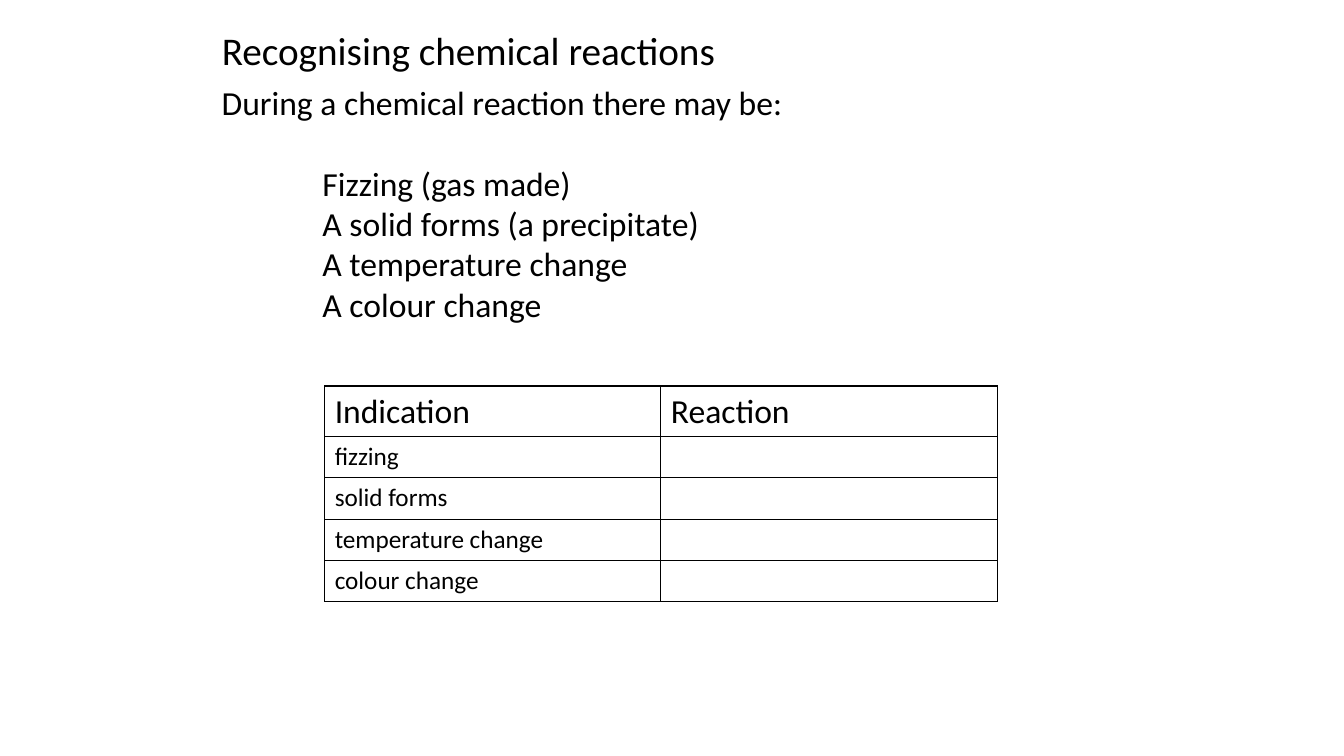
from dataclasses import dataclass

from lxml.etree import SubElement
from pptx import Presentation
from pptx.dml.color import RGBColor
from pptx.enum.text import MSO_ANCHOR, MSO_AUTO_SIZE, PP_ALIGN
from pptx.oxml.ns import qn
from pptx.util import Inches, Pt


@dataclass(frozen=True)
class Theme:
    font: str = "Calibri"
    ink: RGBColor = RGBColor(0, 0, 0)
    title: int = 28
    body: int = 24
    cell: int = 18
    line_height: int = 29
    border: int = 1


class Page:
    """Holds the theme and the current slide, and adds each kind of element."""

    def __init__(self, deck, theme):
        self.theme = theme
        self.slide = deck.slides.add_slide(deck.slide_layouts[5])

    def add_span(self, para, text, size):
        span = para.add_run()
        span.text = text
        span.font.name = self.theme.font
        span.font.size = Pt(size)
        span.font.color.rgb = self.theme.ink

    def place(self, box, left, top, width, height):
        box.left, box.top = Inches(left), Inches(top)
        box.width, box.height = Inches(width), Inches(height)

    def add_title(self, text, *frame):
        box = self.slide.shapes.title
        self.place(box, *frame)
        box.text_frame.word_wrap = True
        box.text_frame.auto_size = MSO_AUTO_SIZE.SHAPE_TO_FIT_TEXT
        box.text_frame.vertical_anchor = MSO_ANCHOR.TOP
        para = box.text_frame.paragraphs[0]
        para.alignment = PP_ALIGN.LEFT
        self.add_span(para, text, self.theme.title)

    def add_list(self, lead, items, indent, *frame):
        box = self.slide.shapes.add_textbox(*map(Inches, frame))
        box.text_frame.word_wrap = True
        box.text_frame.auto_size = MSO_AUTO_SIZE.SHAPE_TO_FIT_TEXT
        lead_para = box.text_frame.paragraphs[0]
        lead_para.space_after = Pt(self.theme.line_height)
        self.add_span(lead_para, lead, self.theme.body)
        for item in items:
            para = box.text_frame.add_paragraph()
            para._p.get_or_add_pPr().set("marL", str(Inches(indent)))
            self.add_span(para, item, self.theme.body)

    def add_borders(self, cell):
        properties = cell._tc.get_or_add_tcPr()
        for side in ("a:lnL", "a:lnR", "a:lnT", "a:lnB"):
            line = SubElement(properties, qn(side), w=str(Pt(self.theme.border)))
            fill = SubElement(line, qn("a:solidFill"))
            SubElement(fill, qn("a:srgbClr"), val=str(self.theme.ink))

    def add_table(self, rows, header_height, row_height, *frame):
        table = self.slide.shapes.add_table(
            len(rows), len(rows[0]), *map(Inches, frame)
        ).table
        for row_index, texts in enumerate(rows):
            header = row_index == 0
            table.rows[row_index].height = Inches(header_height if header else row_height)
            size = self.theme.body if header else self.theme.cell
            for column_index, text in enumerate(texts):
                cell = table.cell(row_index, column_index)
                self.add_borders(cell)
                cell.fill.background()
                if text:
                    self.add_span(cell.text_frame.paragraphs[0], text, size)


def main():
    deck = Presentation()
    deck.slide_width, deck.slide_height = Inches(13.33), Inches(7.5)
    page = Page(deck, Theme())
    page.add_title("Recognising chemical reactions", 2.1, 0.21, 8.66, 0.57)
    signs = [
        "Fizzing (gas made)",
        "A solid forms (a precipitate)",
        "A temperature change",
        "A colour change",
    ]
    page.add_list(
        "During a chemical reaction there may be:", signs, 1, 2.1, 0.76, 8.9, 2.52
    )
    indications = ["fizzing", "solid forms", "temperature change", "colour change"]
    rows = [("Indication", "Reaction")] + [(name, "") for name in indications]
    page.add_table(rows, 0.5, 0.41, 3.22, 3.83, 6.67, 2.12)
    deck.save("out.pptx")


if __name__ == "__main__":
    main()
